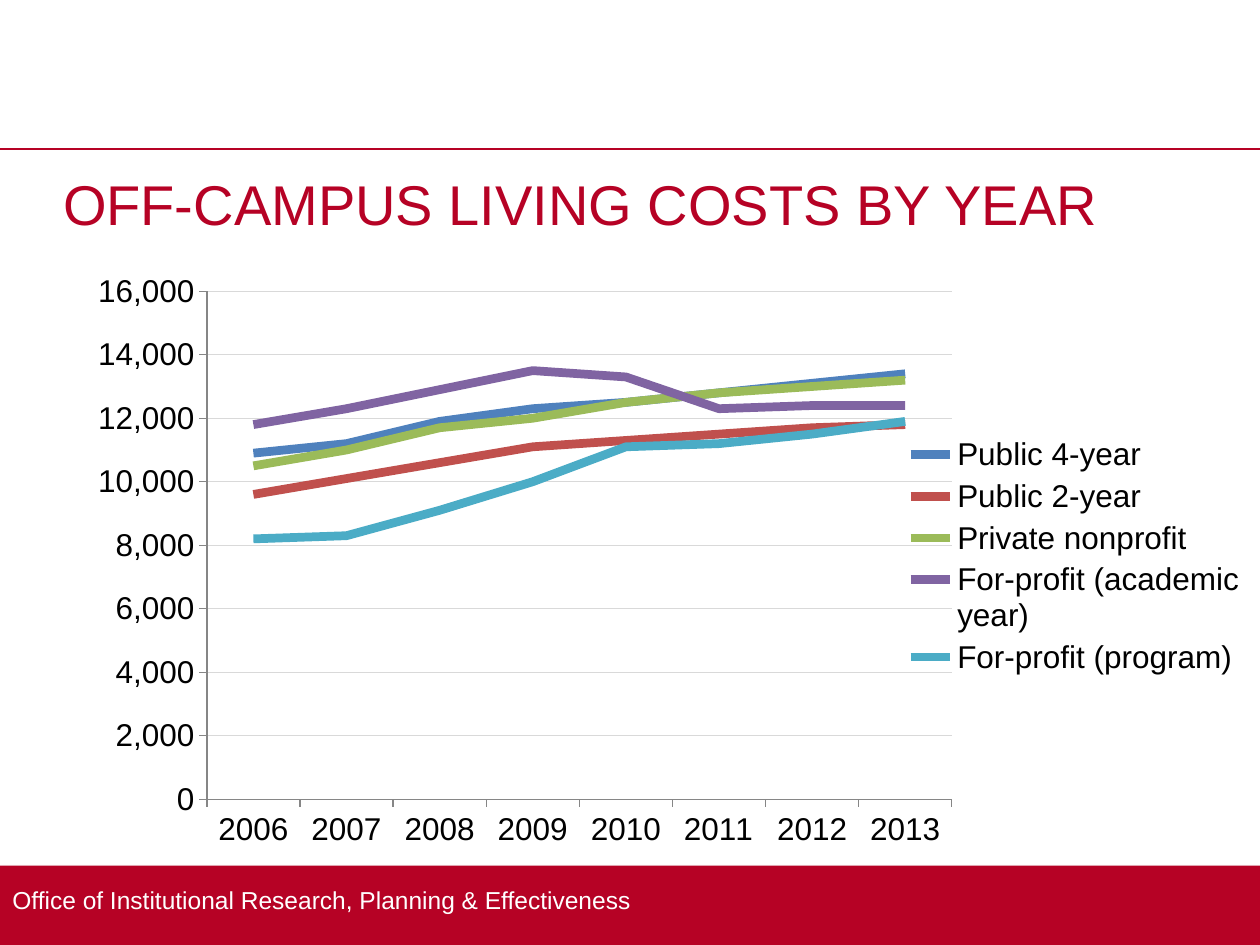
from lxml.etree import SubElement
from pptx import Presentation
from pptx.chart.data import CategoryChartData
from pptx.dml.color import RGBColor
from pptx.enum.chart import XL_CHART_TYPE, XL_LEGEND_POSITION, XL_MARKER_STYLE, XL_TICK_MARK
from pptx.enum.shapes import MSO_CONNECTOR, MSO_SHAPE
from pptx.enum.text import MSO_ANCHOR, MSO_AUTO_SIZE, PP_ALIGN
from pptx.oxml import parse_xml
from pptx.oxml.ns import nsdecls, qn
from pptx.util import Cm, Pt

FONT = "Arial"
CRIMSON, WHITE, BLACK = "B60225", "FFFFFF", "000000"
GRID_GRAY, AXIS_GRAY = "D9D9D9", "868686"
SLIDE_WIDTH, SLIDE_HEIGHT = 25.4, 19.05
BAND_TOP = 17.45

HEADING = "OFF-CAMPUS LIVING COSTS BY YEAR"
OFFICE = "Office of Institutional Research, Planning & Effectiveness"
YEARS = [str(year) for year in range(2006, 2014)]
COSTS = [
    ("Public 4-year", "4F81BD", (10900, 11200, 11900, 12300, 12500, 12800, 13100, 13400)),
    ("Public 2-year", "C0504D", (9600, 10100, 10600, 11100, 11300, 11500, 11700, 11800)),
    ("Private nonprofit", "9BBB59", (10500, 11000, 11700, 12000, 12500, 12800, 13000, 13200)),
    ("For-profit (academic year)", "8064A2", (11800, 12300, 12900, 13500, 13300, 12300, 12400, 12400)),
    ("For-profit (program)", "4BACC6", (8200, 8300, 9100, 10000, 11100, 11200, 11500, 11900)),
]
PLOT_AREA = {"x": 0.108, "y": 0.059, "w": 0.631, "h": 0.847}


def color(hex_code):
    return RGBColor.from_string(hex_code)


def set_line(line, hex_code, width):
    line.color.rgb = color(hex_code)
    line.width = Pt(width)


def set_font(font, size, hex_code):
    font.name = FONT
    font.size = Pt(size)
    font.color.rgb = color(hex_code)


def write(frame, text, size, hex_code, anchor):
    frame.word_wrap = True
    frame.auto_size = MSO_AUTO_SIZE.NONE
    frame.vertical_anchor = anchor
    paragraph = frame.paragraphs[0]
    paragraph.alignment = PP_ALIGN.LEFT
    run = paragraph.add_run()
    run.text = text
    set_font(run.font, size, hex_code)


def add_band(slide):
    band = slide.shapes.add_shape(
        MSO_SHAPE.RECTANGLE, 0, Cm(BAND_TOP), Cm(SLIDE_WIDTH), Cm(SLIDE_HEIGHT - BAND_TOP))
    band.fill.solid()
    band.fill.fore_color.rgb = color(CRIMSON)
    band.line.fill.background()
    band.shadow.inherit = False
    effects = band.element.spPr.find(qn("a:effectLst"))
    effects.append(parse_xml(
        f'<a:outerShdw {nsdecls("a")} blurRad="{Pt(3.1)}" dist="{Pt(1.8)}" dir="5400000" '
        f'rotWithShape="0"><a:srgbClr val="{BLACK}"><a:alpha val="35000"/></a:srgbClr></a:outerShdw>'))
    office = slide.shapes.add_textbox(0, Cm(17.48), Cm(SLIDE_WIDTH), Cm(1.3))
    write(office.text_frame, OFFICE, 14, WHITE, MSO_ANCHOR.MIDDLE)


def add_rule(slide):
    rule = slide.shapes.add_connector(MSO_CONNECTOR.STRAIGHT, 0, Cm(3), Cm(SLIDE_WIDTH), Cm(3))
    set_line(rule.line, CRIMSON, 1)
    SubElement(rule.element.spPr, qn("a:effectLst"))


def set_heading(slide):
    heading = slide.shapes.title
    heading.left, heading.top, heading.width, heading.height = Cm(1.27), Cm(3.28), Cm(22.86), Cm(2.2)
    frame = heading.text_frame
    frame.margin_left = frame.margin_right = 0
    write(frame, HEADING, 32, CRIMSON, MSO_ANCHOR.TOP)


def place_plot(chart):
    plot_area = chart.plots[0]._element.getparent()
    for old_layout in plot_area.findall(qn("c:layout")):
        plot_area.remove(old_layout)
    settings = {"layoutTarget": "inner", "xMode": "edge", "yMode": "edge", **PLOT_AREA}
    parts = "".join(f'<c:{tag} val="{value}"/>' for tag, value in settings.items())
    plot_area.insert(0, parse_xml(
        f'<c:layout {nsdecls("c")}><c:manualLayout>{parts}</c:manualLayout></c:layout>'))


def add_cost_chart(slide):
    data = CategoryChartData(number_format="#,##0")
    data.categories = YEARS
    for name, _, values in COSTS:
        data.add_series(name, values)
    chart = slide.shapes.add_chart(
        XL_CHART_TYPE.LINE, Cm(1.6), Cm(5.16), Cm(23.8), Cm(12.09), data).chart
    set_font(chart.font, 18, BLACK)
    chart.has_title = False
    chart.has_legend = True
    chart.legend.position = XL_LEGEND_POSITION.RIGHT
    chart.legend.include_in_layout = False
    chart.plots[0].vary_by_categories = False
    for series, (_, hex_code, _) in zip(chart.plots[0].series, COSTS):
        series.smooth = False
        series.marker.style = XL_MARKER_STYLE.NONE
        set_line(series.format.line, hex_code, 5)
    for axis in (chart.category_axis, chart.value_axis):
        axis.major_tick_mark = XL_TICK_MARK.OUTSIDE
        axis.minor_tick_mark = XL_TICK_MARK.NONE
        set_line(axis.format.line, AXIS_GRAY, 0.75)
    costs = chart.value_axis
    costs.minimum_scale, costs.maximum_scale, costs.major_unit = 0, 16000, 2000
    costs.tick_labels.number_format = "#,##0"
    costs.tick_labels.number_format_is_linked = False
    costs.has_major_gridlines = True
    set_line(costs.major_gridlines.format.line, GRID_GRAY, 0.75)
    place_plot(chart)


def main():
    deck = Presentation()
    deck.slide_width, deck.slide_height = Cm(SLIDE_WIDTH), Cm(SLIDE_HEIGHT)
    slide = deck.slides.add_slide(deck.slide_layouts[5])
    add_band(slide)
    add_rule(slide)
    set_heading(slide)
    add_cost_chart(slide)
    deck.save("out.pptx")


if __name__ == "__main__":
    main()
